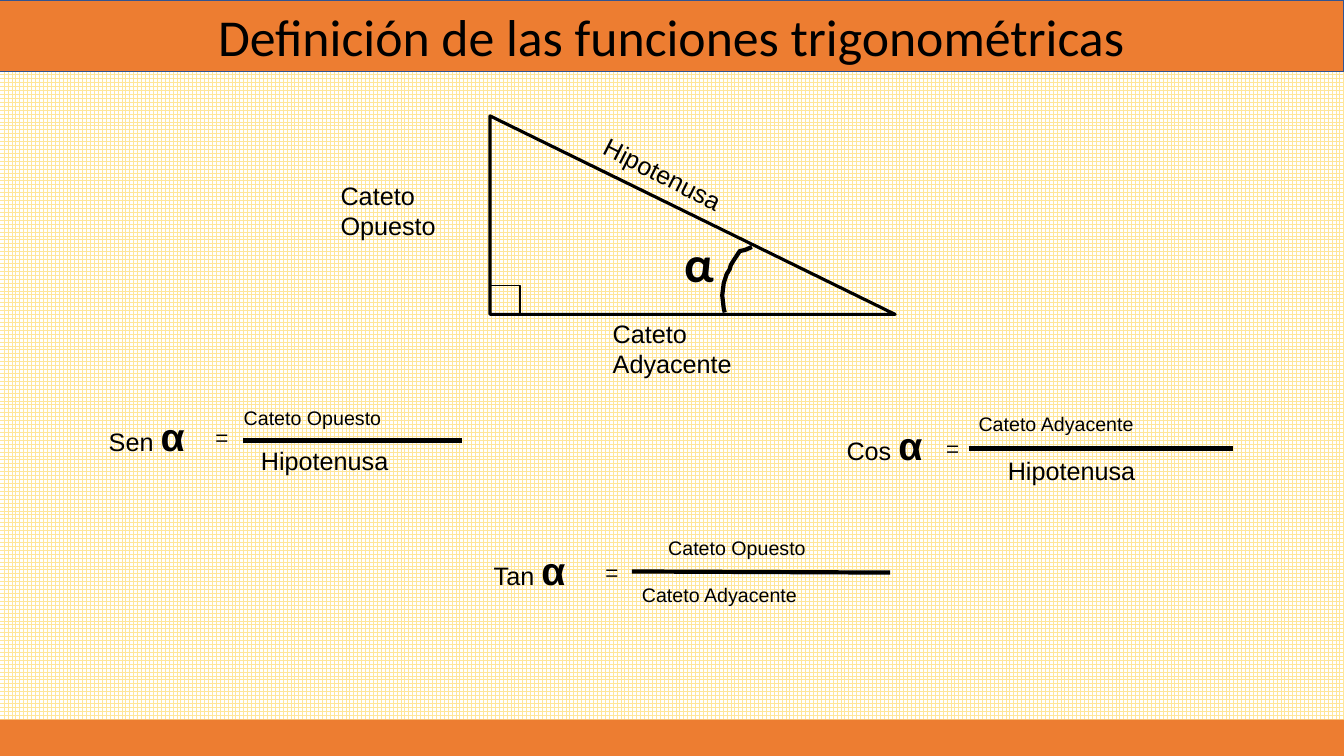
"""Build a slide that defines the sine, cosine and tangent of an angle."""
from lxml.etree import SubElement
from pptx import Presentation
from pptx.dml.color import RGBColor
from pptx.enum.dml import MSO_PATTERN
from pptx.enum.shapes import MSO_CONNECTOR, MSO_SHAPE
from pptx.enum.text import MSO_ANCHOR, MSO_AUTO_SIZE, PP_ALIGN
from pptx.oxml.ns import qn
from pptx.util import Pt

BLACK = RGBColor(0x00, 0x00, 0x00)
WHITE = RGBColor(0xFF, 0xFF, 0xFF)
ORANGE = RGBColor(0xED, 0x7D, 0x31)
BLUE = RGBColor(0x32, 0x54, 0x91)
CREAM = RGBColor(0xFF, 0xE6, 0x99)

WIDTH, HEIGHT = 960, 540
ALPHA = "α"
OPPOSITE, ADJACENT, HYPOTENUSE = "Cateto Opuesto", "Cateto Adyacente", "Hipotenusa"
ARC_POINTS = [
    (537.1, 176.4), (532.1, 178.6), (528.5, 179.3), (524.2, 185.8), (522, 189.4),
    (521.3, 192.2), (519.1, 195.8), (517, 202.3), (515.9, 211), (517, 220.3), (517.7, 223.2),
]
FORMULAS = [
    {"name": "Sen", "name_box": (70.6, 290.9, 81.4, 41), "equals": (146.2, 298.1),
     "bar": (173.5, 314.6, 329.8, 314.6),
     "top": (OPPOSITE, 14, (167, 286.6, 177.1, 24.5)),
     "bottom": (HYPOTENUSE, 18, (179.3, 314.6, 151.2, 28.8))},
    {"name": "Cos", "name_box": (597.6, 297.4, 79.2, 41), "equals": (668.2, 306),
     "bar": (691.9, 320.4, 880.6, 320.4),
     "top": (ADJACENT, 14, (691.9, 290.9, 188.6, 24.5)),
     "bottom": (HYPOTENUSE, 18, (712.8, 321.8, 151.2, 28.8))},
    {"name": "Tan", "name_box": (345.6, 386.6, 84.2, 41), "equals": (424.8, 394.6),
     "bar": (451.4, 408.2, 635.8, 409),
     "top": (OPPOSITE, 14, (470.2, 379.4, 163.4, 24.5)),
     "bottom": (ADJACENT, 14, (451.4, 412.6, 195.8, 24.5))},
]


def add_run(paragraph, text, size=18, font="Arial", bold=False, color=BLACK):
    """Add formatted text to a paragraph."""
    run = paragraph.add_run()
    run.text = text
    run.font.size = Pt(size)
    run.font.name = font
    run.font.bold = bold
    run.font.color.rgb = color


class SlideBuilder:
    """Draw the elements of one slide in a shared style."""

    def __init__(self, slide, ink=BLACK):
        """Keep the slide and the line colour."""
        self.slide = slide
        self.ink = ink

    def background(self):
        """Fill the slide with a grid pattern."""
        fill = self.slide.background.fill
        fill.patterned()
        fill.pattern = MSO_PATTERN.LARGE_GRID
        fill.fore_color.rgb = CREAM
        fill.back_color.rgb = WHITE

    def paint(self, shape, fill=None, line=None, weight=1):
        """Set the fill and outline of a shape and drop its shadow."""
        shape.shadow.inherit = False
        if fill is None:
            shape.fill.background()
        else:
            shape.fill.solid()
            shape.fill.fore_color.rgb = fill
        if line is None:
            shape.line.fill.background()
        else:
            shape.line.color.rgb = line
            shape.line.width = Pt(weight)

    def shape(self, kind, box, **style):
        """Add a preset shape."""
        shape = self.slide.shapes.add_shape(kind, *map(Pt, box))
        self.paint(shape, **style)
        return shape

    def title(self, box, text):
        """Add the title band."""
        band = self.shape(MSO_SHAPE.RECTANGLE, box, fill=ORANGE, line=BLUE)
        frame = band.text_frame
        frame.vertical_anchor = MSO_ANCHOR.MIDDLE
        frame.paragraphs[0].alignment = PP_ALIGN.CENTER
        add_run(frame.paragraphs[0], text, size=37, font="Calibri")

    def curve(self, points, weight):
        """Add an open outline through the points."""
        scaled = [(round(x * 10), round(y * 10)) for x, y in points]
        builder = self.slide.shapes.build_freeform(*scaled[0], scale=Pt(1) / 10)
        builder.add_line_segments(scaled[1:], close=False)
        self.paint(builder.convert_to_shape(), line=self.ink, weight=weight)

    def text(self, box, text, rotation=0, **style):
        """Add a text box and return its paragraph."""
        shape = self.slide.shapes.add_textbox(*map(Pt, box))
        shape.rotation = rotation
        frame = shape.text_frame
        frame.word_wrap = True
        frame.auto_size = MSO_AUTO_SIZE.SHAPE_TO_FIT_TEXT
        add_run(frame.paragraphs[0], text, **style)
        return frame.paragraphs[0]

    def line(self, ends, weight):
        """Add a straight line."""
        connector = self.slide.shapes.add_connector(MSO_CONNECTOR.STRAIGHT, *map(Pt, ends))
        connector.line.color.rgb = self.ink
        connector.line.width = Pt(weight)
        SubElement(connector.element.spPr, qn("a:effectLst"))

    def formula(self, name, name_box, equals, bar, top, bottom):
        """Add a function name, an equals sign and a fraction."""
        paragraph = self.text(name_box, f"{name} ")
        add_run(paragraph, ALPHA, size=28, bold=True)
        self.text((*equals, 26.6, 28.8), "=", font="Montserrat")
        self.line(bar, weight=3)
        for label, size, box in (top, bottom):
            self.text(box, label, size=size)


def main():
    """Build and save the presentation."""
    presentation = Presentation()
    presentation.slide_width, presentation.slide_height = Pt(WIDTH), Pt(HEIGHT)
    builder = SlideBuilder(presentation.slides.add_slide(presentation.slide_layouts[6]))
    builder.background()
    builder.shape(MSO_SHAPE.RIGHT_TRIANGLE, (350, 82.8, 289.4, 141.8), line=BLACK, weight=2.25)
    builder.curve(ARC_POINTS, weight=3)
    builder.text((481.7, 162, 33.8, 51.1), ALPHA, size=36, font="Calibri", bold=True)
    builder.text((418.3, 120.2, 151.2, 28.8), HYPOTENUSE, rotation=26.9)
    builder.text((236.2, 125.3, 113, 51.1), OPPOSITE)
    builder.text((430.6, 223.9, 146.2, 51.1), ADJACENT)
    for formula in FORMULAS:
        builder.formula(**formula)
    builder.shape(MSO_SHAPE.RECTANGLE, (350, 203.8, 21.4, 20.8), line=BLACK)
    builder.title((-1.2, 0, 961.2, 51), "Definición de las funciones trigonométricas")
    builder.shape(MSO_SHAPE.RECTANGLE, (0, 514, WIDTH, 28), fill=ORANGE)
    presentation.save("out.pptx")


if __name__ == "__main__":
    main()
